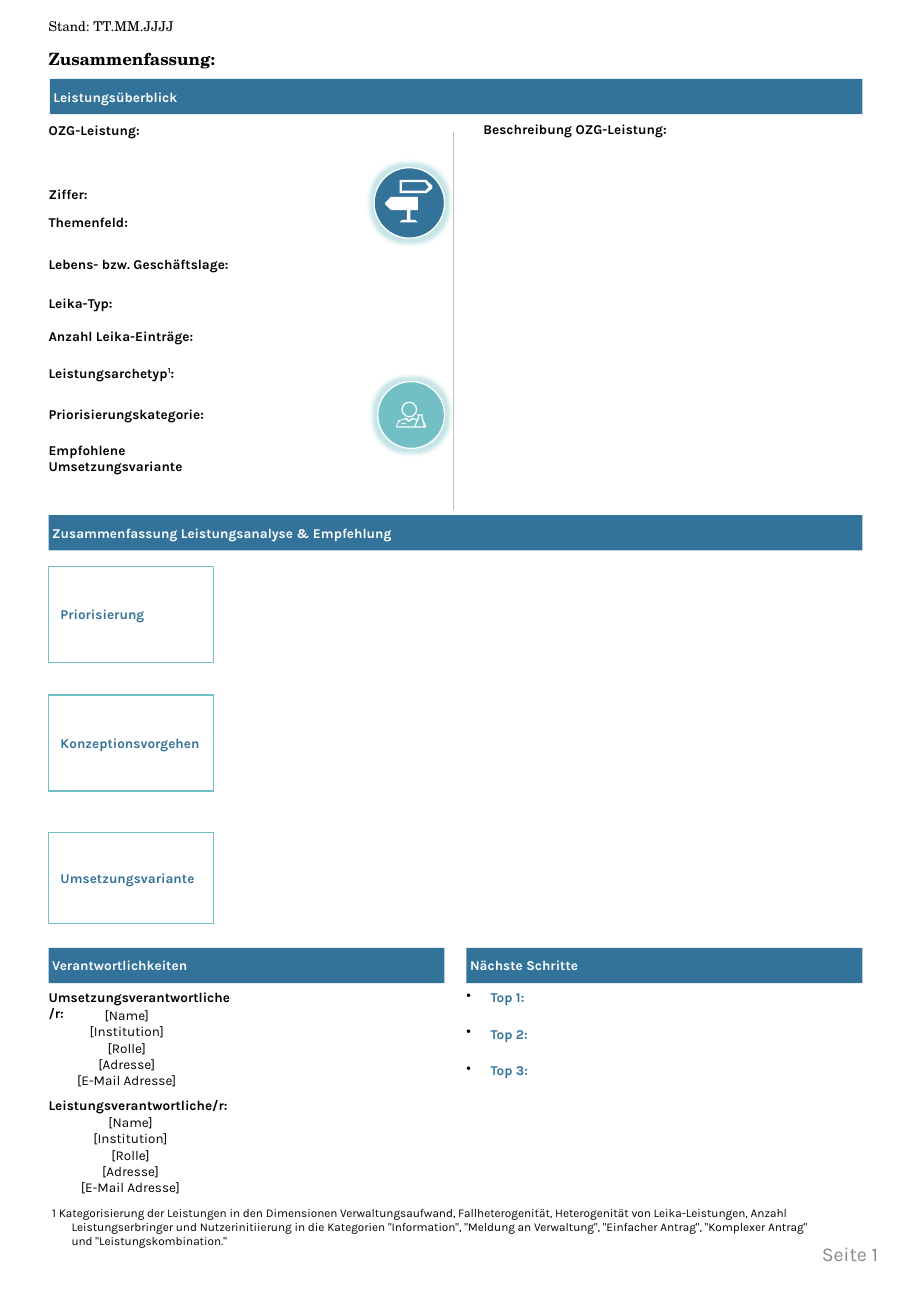
from lxml.etree import SubElement
from pptx import Presentation
from pptx.dml.color import RGBColor
from pptx.enum.shapes import MSO_CONNECTOR as Connector, MSO_SHAPE as Shape
from pptx.enum.text import MSO_ANCHOR as Anchor, PP_ALIGN as Align
from pptx.oxml.ns import qn
from pptx.util import Inches, Pt

BLUE = "337299"
TEAL = "72BFC5"
WHITE = "FFFFFF"
BLACK = "000000"
GREY = "898989"
BODY_FONT = "Karla"
TITLE_FONT = "TeX Gyre Schola"

LABELS = [
    (1.0, "OZG-Leistung:"),
    (1.53, "Ziffer:"),
    (1.76, "Themenfeld:"),
    (2.11, "Lebens- bzw. Geschäftslage:"),
    (2.43, "Leika-Typ:"),
    (2.7, "Anzahl Leika-Einträge:"),
    (3.34, "Priorisierungskategorie:"),
    (3.64, "Empfohlene Umsetzungsvariante"),
]
BANNERS = [
    (0.41, 0.65, 6.69, "Leistungsüberblick"),
    (0.4, 4.24, 6.7, "Zusammenfassung Leistungsanalyse & Empfehlung"),
    (0.4, 7.8, 3.26, "Verantwortlichkeiten"),
    (3.84, 7.8, 3.26, "Nächste Schritte"),
]
ANALYSIS_BOXES = [
    (4.66, 0.79, "Priorisierung"),
    (5.72, 0.79, "Konzeptionsvorgehen"),
    (6.85, 0.75, "Umsetzungsvariante"),
]
CONTACTS = [
    (8.14, "Umsetzungsverantwortliche/r:", 0.16, 8.29),
    (9.03, "Leistungsverantwortliche/r:", 0.19, 9.17),
]
CONTACT_LINES = [
    ["[Name]", "[Institution]"],
    ["[Rolle]", "[Adresse]", "[E-Mail Adresse]"],
]
FOOTNOTE = (
    "1 Kategorisierung der Leistungen in den Dimensionen Verwaltungsaufwand, "
    "Fallheterogenität, Heterogenität von Leika-Leistungen, Anzahl "
    "Leistungserbringer und Nutzerinitiierung in die Kategorien "
    '"Information", "Meldung an Verwaltung", "Einfacher Antrag", '
    '"Komplexer Antrag" und "Leistungskombination."'
)

SIGN_RIGHT = [
    [(3.29, 1.48), (3.51, 1.48), (3.56, 1.53), (3.56, 1.55), (3.51, 1.59), (3.29, 1.59)],
    [(3.31, 1.5), (3.31, 1.57), (3.5, 1.57), (3.53, 1.54), (3.5, 1.5)],
]
SIGN_LEFT = [
    [(3.44, 1.62), (3.22, 1.62), (3.17, 1.67), (3.17, 1.68), (3.22, 1.73),
     (3.35, 1.73), (3.35, 1.81), (3.31, 1.81), (3.29, 1.83), (3.44, 1.83),
     (3.42, 1.81), (3.38, 1.81), (3.38, 1.73), (3.44, 1.73)],
]
PERSON_AND_FLASK = [
    [(3.48, 3.44), (3.48, 3.41), (3.43, 3.41), (3.44, 3.42), (3.44, 3.44),
     (3.43, 3.45), (3.4, 3.44), (3.39, 3.44), (3.37, 3.46), (3.35, 3.44),
     (3.34, 3.44), (3.28, 3.46), (3.27, 3.49), (3.26, 3.51), (3.27, 3.52),
     (3.5, 3.52), (3.51, 3.51)],
    [(3.34, 3.45), (3.36, 3.47), (3.37, 3.47), (3.4, 3.45), (3.43, 3.46),
     (3.41, 3.51), (3.27, 3.51), (3.28, 3.48), (3.3, 3.46)],
    [(3.42, 3.51), (3.45, 3.44), (3.45, 3.42), (3.47, 3.42), (3.47, 3.44),
     (3.49, 3.51)],
]
ARM = [[(3.3, 3.48), (3.34, 3.48), (3.34, 3.49), (3.31, 3.49)]]


def color(value):
    return RGBColor.from_string(value)


def add_run(paragraph, text, size=8, ink=BLACK, bold=False, font=BODY_FONT):
    run = paragraph.add_run()
    run.text = text
    run.font.name = font
    run.font.size = Pt(size)
    run.font.bold = bold
    run.font.color.rgb = color(ink)
    return run


def set_hanging(paragraph, indent):
    properties = paragraph._p.get_or_add_pPr()
    properties.set("marL", str(Inches(indent)))
    properties.set("indent", str(-Inches(indent)))
    return properties


def set_frame(shape, left_inset, inset, anchor):
    frame = shape.text_frame
    frame.word_wrap = True
    frame.vertical_anchor = anchor
    frame.margin_left = Inches(left_inset)
    frame.margin_right = frame.margin_top = frame.margin_bottom = Inches(inset)
    return frame


def add_text(slide, left, top, width, height, text="", anchor=Anchor.TOP, **style):
    box = slide.shapes.add_textbox(
        Inches(left), Inches(top), Inches(width), Inches(height))
    frame = set_frame(box, 0, 0, anchor)
    if text:
        add_run(frame.paragraphs[0], text, **style)
    return frame


def add_shape(slide, preset, left, top, width, height, fill=None, line=None, weight=0.75):
    shape = slide.shapes.add_shape(
        preset, Inches(left), Inches(top), Inches(width), Inches(height))
    shape.shadow.inherit = False
    paint(shape, fill, line, weight)
    return shape


def paint(shape, fill, line=None, weight=0.75):
    if fill:
        shape.fill.solid()
        shape.fill.fore_color.rgb = color(fill)
    else:
        shape.fill.background()
    if line:
        shape.line.color.rgb = color(line)
        shape.line.width = Pt(weight)
    else:
        shape.line.fill.background()


def add_caption_box(slide, left, top, width, height, text, ink, left_inset, **look):
    shape = add_shape(slide, Shape.RECTANGLE, left, top, width, height, **look)
    paragraph = set_frame(shape, left_inset, 0.03, Anchor.MIDDLE).paragraphs[0]
    paragraph.alignment = Align.LEFT
    add_run(paragraph, text, ink=ink, bold=True)


def add_badge(slide, left, top, size, fill):
    badge = add_shape(slide, Shape.OVAL, left, top, size, size, fill, WHITE)
    effects = badge._element.spPr.find(qn("a:effectLst"))
    glow = SubElement(effects, qn("a:glow"), rad=str(Pt(5)))
    tint = SubElement(glow, qn("a:srgbClr"), val=TEAL)
    SubElement(tint, qn("a:alpha"), val="40000")


def add_outline(slide, contours):
    points = [[(Inches(x), Inches(y)) for x, y in contour] for contour in contours]
    builder = slide.shapes.build_freeform(*points[0][0])
    builder.add_line_segments(points[0][1:])
    for hole in points[1:]:
        builder.move_to(*hole[0])
        builder.add_line_segments(hole[1:])
    shape = builder.convert_to_shape()
    shape.shadow.inherit = False
    paint(shape, WHITE)


def add_divider(slide, x, top, bottom):
    line = slide.shapes.add_connector(
        Connector.STRAIGHT, Inches(x), Inches(top), Inches(x), Inches(bottom))
    line.line.color.rgb = color("BFBFBF")
    line.line.width = Pt(0.25)
    SubElement(line._element.spPr, qn("a:effectLst"))


def add_contact(slide, left, top):
    frame = add_text(slide, left, top, 1.77, 0.67)
    for index, lines in enumerate(CONTACT_LINES):
        paragraph = frame.add_paragraph() if index else frame.paragraphs[0]
        paragraph.alignment = Align.CENTER
        for position, text in enumerate(lines):
            if position:
                paragraph.add_line_break()
            add_run(paragraph, text)


def add_next_steps(slide):
    frame = add_text(slide, 3.84, 8.14, 3.26, 1.21)
    for index in range(3):
        paragraph = frame.add_paragraph() if index else frame.paragraphs[0]
        if index:
            paragraph.space_before = Pt(12)
        properties = set_hanging(paragraph, 0.2)
        bullet_color = SubElement(properties, qn("a:buClr"))
        SubElement(bullet_color, qn("a:srgbClr"), val=BLACK)
        SubElement(properties, qn("a:buChar"), char="•")
        add_run(paragraph, f"Top {index + 1}:", ink=BLUE, bold=True)


def main():
    presentation = Presentation()
    presentation.slide_width = Inches(7.5)
    presentation.slide_height = Inches(10.83)
    slide = presentation.slides.add_slide(presentation.slide_layouts[6])

    add_text(slide, 0.4, 0.15, 5.55, 0.13, "Stand: TT.MM.JJJJ", font=TITLE_FONT)
    add_text(slide, 0.4, 0.4, 5.55, 0.17, "Zusammenfassung:",
             size=10, bold=True, font=TITLE_FONT)
    for left, top, width, text in BANNERS:
        add_caption_box(slide, left, top, width, 0.29, text, WHITE, 0.03, fill=BLUE)

    for top, text in LABELS:
        add_text(slide, 0.4, top, 1.6, 0.19, text, bold=True)
    archetype = add_text(slide, 0.4, 3, 1.6, 0.19, "Leistungsarchetyp", bold=True)
    mark = add_run(archetype.paragraphs[0], "1", bold=True)
    mark._r.get_or_add_rPr().set("baseline", "30000")
    add_run(archetype.paragraphs[0], ":", bold=True)
    add_text(slide, 3.98, 1, 3.11, 0.3, "Beschreibung OZG-Leistung:", bold=True)
    add_divider(slide, 3.73, 1.09, 4.2)

    add_badge(slide, 3.08, 1.38, 0.58, BLUE)
    add_badge(slide, 3.11, 3.14, 0.55, TEAL)
    for contours in (SIGN_RIGHT, SIGN_LEFT, PERSON_AND_FLASK, ARM):
        add_outline(slide, contours)
    add_shape(slide, Shape.OVAL, 3.31, 3.31, 0.12, 0.12, line=WHITE)

    for top, height, text in ANALYSIS_BOXES:
        add_caption_box(slide, 0.4, top, 1.36, height, text, BLUE, 0.1, line=TEAL)
    for heading_top, heading, left, top in CONTACTS:
        add_text(slide, 0.4, heading_top, 1.53, 0.13, heading, bold=True)
        add_contact(slide, left, top)
    add_next_steps(slide)

    footnote = add_text(slide, 0.43, 10.03, 6.33, 0.24, FOOTNOTE, Anchor.BOTTOM, size=7)
    set_hanging(footnote.paragraphs[0], 0.16)
    page = add_text(slide, 6.67, 10.22, 0.56, 0.19, "Seite 1", Anchor.MIDDLE,
                    size=11.6, ink=GREY)
    page.paragraphs[0].alignment = Align.RIGHT
    presentation.save("out.pptx")


if __name__ == "__main__":
    main()
